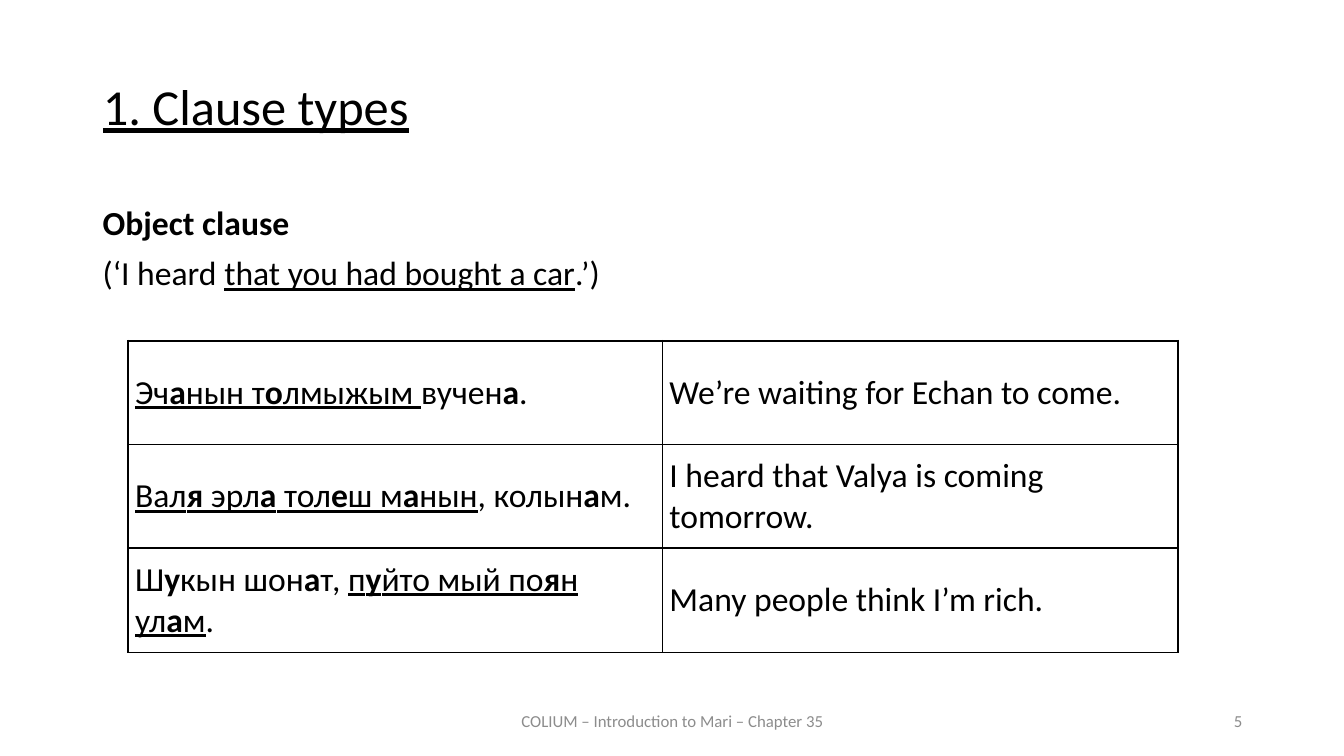
from lxml import etree
from pptx import Presentation
from pptx.dml.color import RGBColor
from pptx.enum.text import MSO_ANCHOR, MSO_AUTO_SIZE, PP_ALIGN
from pptx.oxml.ns import qn
from pptx.util import Inches, Pt

BLACK = RGBColor(0x00, 0x00, 0x00)
GREY = RGBColor(0x8C, 0x8C, 0x8C)
TOP, MIDDLE = MSO_ANCHOR.TOP, MSO_ANCHOR.MIDDLE
LEFT, CENTER, RIGHT = PP_ALIGN.LEFT, PP_ALIGN.CENTER, PP_ALIGN.RIGHT
JUSTIFY = PP_ALIGN.JUSTIFY
NO_AUTOFIT = MSO_AUTO_SIZE.NONE

# In the texts, * switches bold and _ switches underline on or off.
EXAMPLES = [
    ("_Эч*а*нын т*о*лмыжым _вучен*а*.",
     "We’re waiting for Echan to come."),
    ("_Вал*я* эрл*а* тол*е*ш м*а*нын_, колын*а*м.",
     "I heard that Valya is coming tomorrow."),
    ("Ш*у*кын шон*а*т, _п*у*йто мый по*я*н ул*а*м_.",
     "Many people think I’m rich."),
]


def write_text(para, text, size=24, color=BLACK, font="Calibri",
               align=LEFT, line_spacing=None, space_before=0):
    """Fill a paragraph, turning * and _ marks into bold and underline."""
    para.alignment = align
    para.space_before = Pt(space_before)
    if line_spacing:
        para.line_spacing = line_spacing
    for bold_index, bold_part in enumerate(text.split("*")):
        # Underline carries on across bold marks
        marks_before = "*".join(text.split("*")[:bold_index]).count("_")
        for offset, part in enumerate(bold_part.split("_")):
            if not part:
                continue
            span = para.add_run()
            span.text = part
            span.font.name = font
            span.font.size = Pt(size)
            span.font.color.rgb = color
            span.font.bold = bold_index % 2 == 1
            span.font.underline = (marks_before + offset) % 2 == 1


class SlideBuilder:
    """Holds the current slide and the style of its elements."""

    def __init__(self, deck):
        self.page = deck.slides.add_slide(deck.slide_layouts[5])
        self.thick, self.thin = 1.5, 1

    def title(self, text, left, top, width, height):
        box = self.page.shapes.title
        box.left, box.top = Inches(left), Inches(top)
        box.width, box.height = Inches(width), Inches(height)
        frame = box.text_frame
        frame.auto_size = NO_AUTOFIT
        frame.vertical_anchor = TOP
        write_text(frame.paragraphs[0], text, size=36, align=JUSTIFY,
                   line_spacing=0.9, space_before=12)

    def text(self, lines, left, top, width, height, anchor=TOP, **style):
        box = self.page.shapes.add_textbox(
            Inches(left), Inches(top), Inches(width), Inches(height))
        frame = box.text_frame
        frame.word_wrap = True
        frame.vertical_anchor = anchor
        for index, line in enumerate(lines):
            para = frame.add_paragraph() if index else frame.paragraphs[0]
            write_text(para, line, **style)

    def border(self, cell, widths):
        properties = cell._tc.get_or_add_tcPr()
        for index, (side, width) in enumerate(widths.items()):
            line = etree.Element(qn(f"a:ln{side}"), w=str(Pt(width)))
            fill = etree.SubElement(line, qn("a:solidFill"))
            etree.SubElement(fill, qn("a:srgbClr"), val=str(BLACK))
            properties.insert(index, line)

    def example(self, sentences, left, top, widths, height):
        table = self.page.shapes.add_table(
            1, len(widths), Inches(left), Inches(top),
            Inches(sum(widths)), Inches(height)).table
        table.first_row = table.horz_banding = False
        table.rows[0].height = Inches(height)
        for index, sentence in enumerate(sentences):
            table.columns[index].width = Inches(widths[index])
            cell = table.cell(0, index)
            cell.fill.background()
            cell.vertical_anchor = MIDDLE
            cell.margin_left = cell.margin_right = Inches(0.07)
            cell.margin_top = cell.margin_bottom = 0
            write_text(cell.text_frame.paragraphs[0], sentence)
            is_first = index == 0
            is_last = index == len(widths) - 1
            self.border(cell, {
                "L": self.thick if is_first else self.thin,
                "R": self.thick if is_last else self.thin,
                "T": self.thick,
                "B": self.thin,
            })


def main():
    deck = Presentation()
    deck.slide_width, deck.slide_height = Inches(13.33), Inches(7.5)
    builder = SlideBuilder(deck)

    # Heading and introduction
    builder.title("_1. Clause types_", 0.92, 0.76, 11.5, 0.83)
    builder.text(["*Object clause*",
                  "(‘I heard _that you had bought a car_.’)"],
                 0.92, 2, 11.5, 1.1, line_spacing=0.9, space_before=10)

    # Example sentences, one table each, stacked without gaps
    row_height = 1.03
    for index, sentences in enumerate(EXAMPLES):
        builder.example(sentences, 1.27, 3.38 + index * row_height,
                        [5.3, 5.11], row_height)

    # Footer and page number
    footer_style = {"anchor": MIDDLE, "size": 12, "color": GREY}
    builder.text(["COLIUM – Introduction to Mari – Chapter 35"],
                 4.42, 6.95, 4.5, 0.4, align=CENTER, **footer_style)
    builder.text(["5"], 9.42, 6.95, 3, 0.4, align=RIGHT, **footer_style)

    deck.save("out.pptx")


if __name__ == "__main__":
    main()
